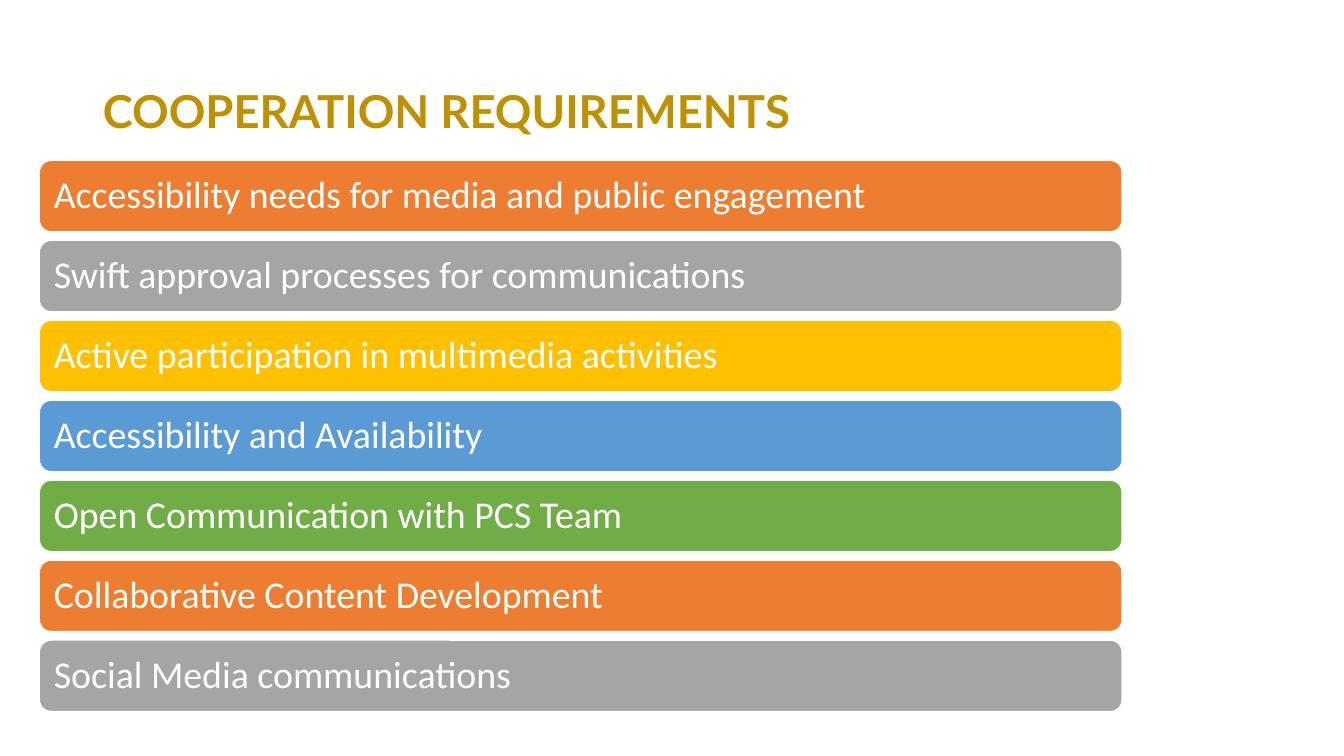
from pptx import Presentation
from pptx.dml.color import RGBColor
from pptx.enum.shapes import MSO_SHAPE
from pptx.enum.text import MSO_ANCHOR, PP_ALIGN
from pptx.util import Inches, Pt

COLORS = {
    "title": "BF9000",
    "white": "FFFFFF",
    "orange": "ED7D31",
    "gray": "A5A5A5",
    "gold": "FFC000",
    "blue": "5B9BD5",
    "green": "70AD47",
}

REQUIREMENTS = [
    ("Accessibility needs for media and public engagement", "orange"),
    ("Swift approval processes for communications", "gray"),
    ("Active participation in multimedia activities", "gold"),
    ("Accessibility and Availability", "blue"),
    ("Open Communication with PCS Team", "green"),
    ("Collaborative Content Development", "orange"),
    ("Social Media communications", "gray"),
]

# Bar grid, in inches
BAR_LEFT, BAR_TOP = 0.39, 1.59
BAR_WIDTH, BAR_HEIGHT = 10.74, 0.71
LAST_BAR_TOP = 6.35
ROW_PITCH = (LAST_BAR_TOP - BAR_TOP) / (len(REQUIREMENTS) - 1)
BAR_INSET = Inches(0.11)


def color(name):
    return RGBColor.from_string(COLORS[name])


def set_text(shape, text, font_name, size, color_name, bold=False):
    frame = shape.text_frame
    frame.word_wrap = True
    frame.vertical_anchor = MSO_ANCHOR.MIDDLE
    frame.text = text
    paragraph = frame.paragraphs[0]
    paragraph.alignment = PP_ALIGN.LEFT
    paragraph.line_spacing = 0.9
    font = paragraph.font
    font.name = font_name
    font.size = Pt(size)
    font.bold = bold
    font.color.rgb = color(color_name)


def add_title(slide, text):
    title = slide.shapes.title
    title.left, title.top = Inches(0.92), Inches(0.4)
    title.width, title.height = Inches(9.97), Inches(1.45)
    set_text(title, text, "Lato", 32.4, "title", bold=True)


def add_bar(slide, row, text, fill_name):
    bar = slide.shapes.add_shape(
        MSO_SHAPE.ROUNDED_RECTANGLE,
        Inches(BAR_LEFT), Inches(BAR_TOP + row * ROW_PITCH),
        Inches(BAR_WIDTH), Inches(BAR_HEIGHT),
    )
    bar.shadow.inherit = False
    bar.fill.solid()
    bar.fill.fore_color.rgb = color(fill_name)
    bar.line.color.rgb = color("white")
    bar.line.width = Pt(1)
    frame = bar.text_frame
    frame.margin_left = frame.margin_right = BAR_INSET
    frame.margin_top = frame.margin_bottom = BAR_INSET
    set_text(bar, text, "Calibri", 27, "white")


def main():
    presentation = Presentation()
    presentation.slide_width = Inches(13.33)
    presentation.slide_height = Inches(7.5)
    title_only = presentation.slide_layouts[5]
    slide = presentation.slides.add_slide(title_only)

    # Heading
    add_title(slide, "COOPERATION REQUIREMENTS")

    # One bar per requirement
    for row, (text, fill_name) in enumerate(REQUIREMENTS):
        add_bar(slide, row, text, fill_name)

    presentation.save("out.pptx")


if __name__ == "__main__":
    main()
